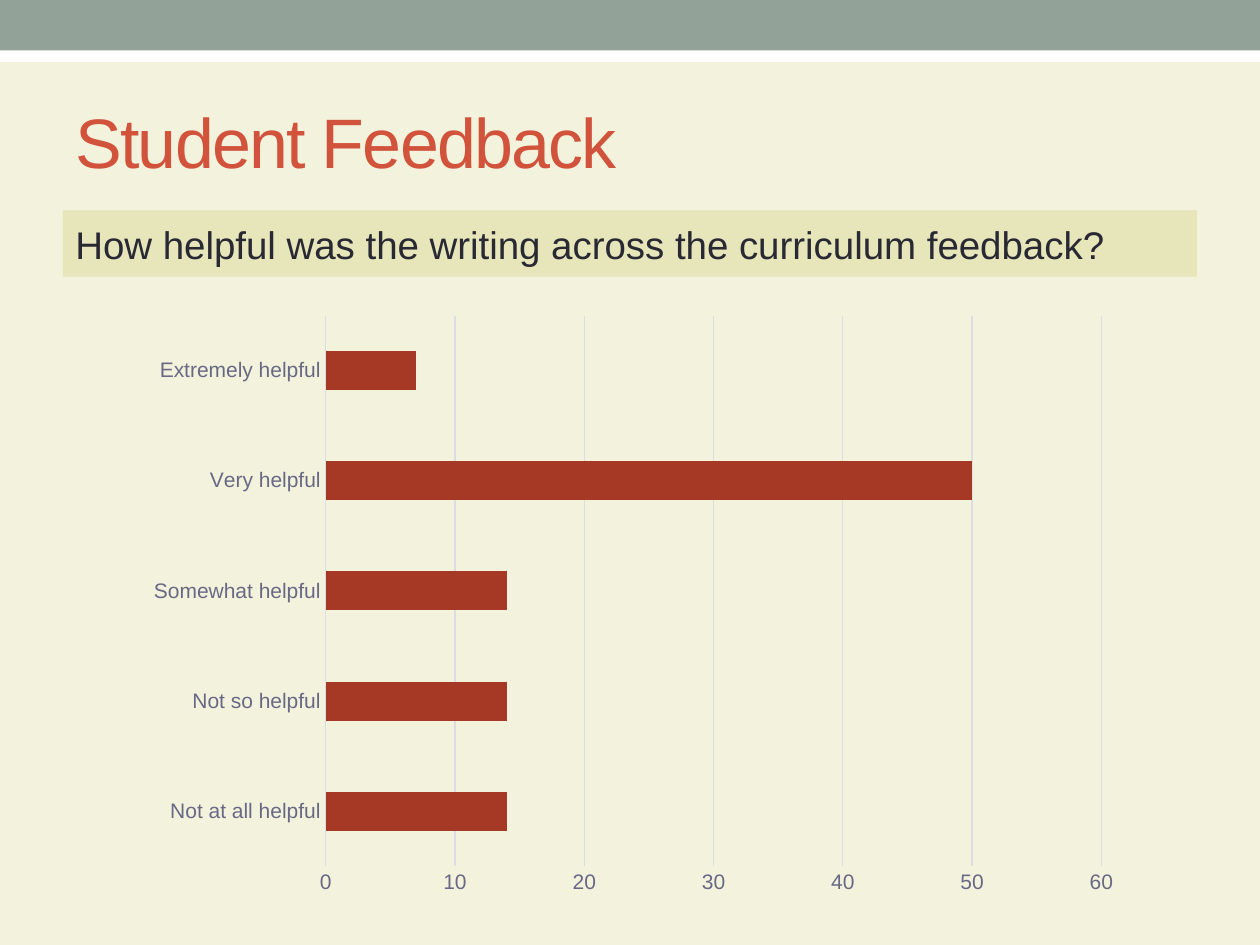
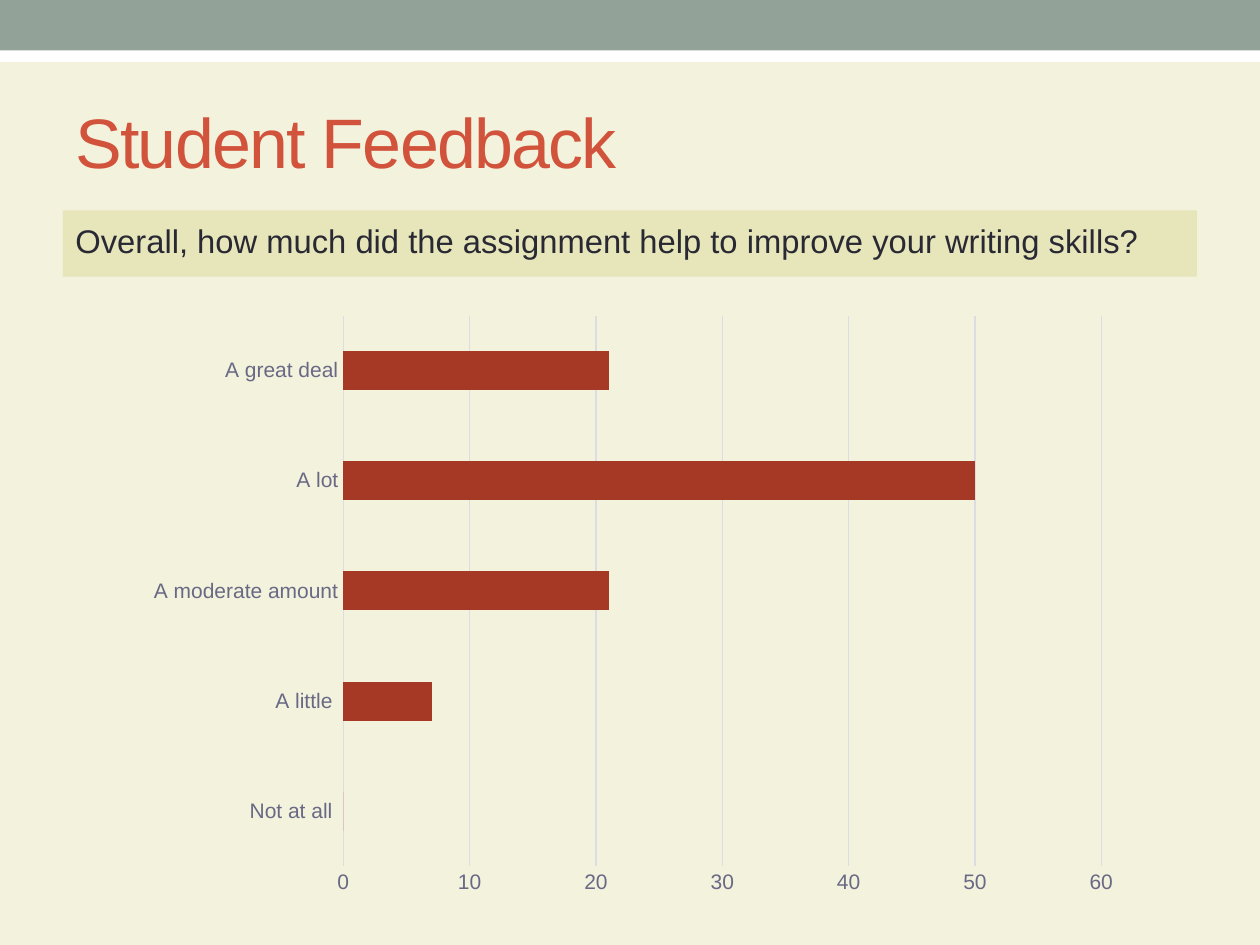
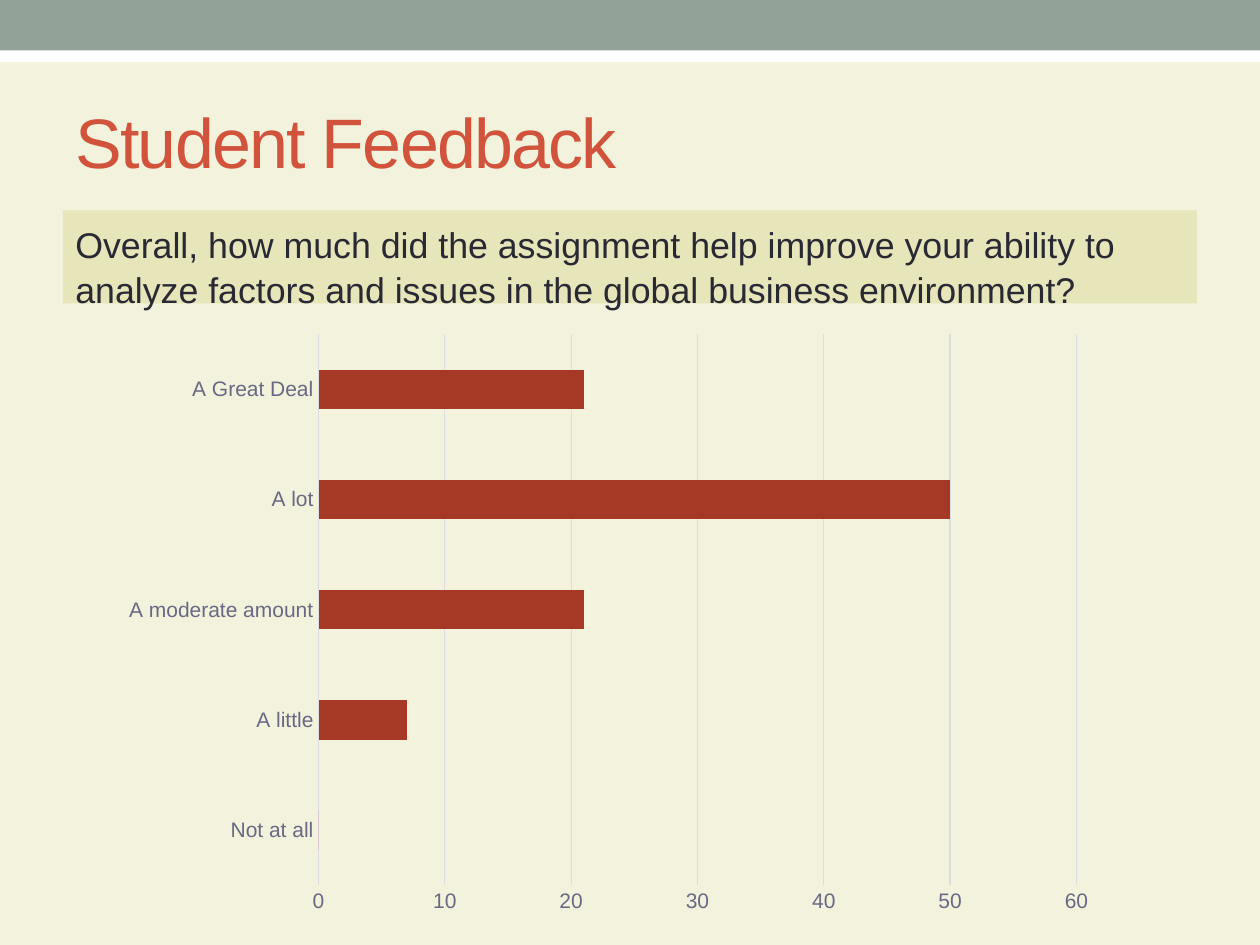
from dataclasses import dataclass

from pptx import Presentation
from pptx import util as u
from pptx.chart.data import CategoryChartData
from pptx.dml.color import RGBColor
from pptx.enum import chart as charts, shapes, text


@dataclass(frozen=True)
class Theme:
    font: str = "Arial"
    page: str = "F3F2DC"
    band: str = "93A299"
    strip: str = "FFFFFF"
    title: str = "D2533C"
    panel: str = "E7E5BA"
    ink: str = "292934"
    label: str = "696986"
    grid: str = "DCDCE3"
    bar: str = "A53926"
    head_size: float = 40
    label_size: float = 12


THEME = Theme()
LEFT, WIDE = 1.27, 22.86

SLIDES = [
    dict(ask="How helpful was the writing across the curriculum feedback?",
         size=22, high=1.34, spot=(2.7, 6.12),
         cats=["Not at all helpful", "Not so helpful", "Somewhat helpful",
               "Very helpful", "Extremely helpful"],
         vals=[14, 14, 14, 50, 7]),
    dict(ask="Overall, how much did the assignment help to improve your "
             "writing skills?",
         size=18.7, high=1.34, spot=(2.7, 6.12),
         cats=["Not at all ", "A little ", "A moderate amount", "A lot",
               "A great deal"],
         vals=[0, 7, 21, 50, 21]),
    dict(ask="Overall, how much did the assignment help improve your ability "
             "to analyze factors and issues in the global business environment?",
         size=20.4, high=1.88, spot=(2.2, 6.5), lead=1.05,
         cats=["Not at all", "A little", "A moderate amount", "A lot",
               "A Great Deal"],
         vals=[0, 7, 21, 50, 21]),
]


def rgb(code):
    return RGBColor.from_string(code)


def style(item, **props):
    for name, value in props.items():
        setattr(item, name, value)


def ink(font, size, color):
    style(font, name=THEME.font, size=u.Pt(size))
    font.color.rgb = rgb(color)


def block(slide, x, y, w, h, color):
    """Add a plain filled rectangle without outline or shadow."""
    box = slide.shapes.add_shape(shapes.MSO_SHAPE.RECTANGLE,
                                 *map(u.Cm, (x, y, w, h)))
    box.shadow.inherit = False
    box.fill.solid()
    box.fill.fore_color.rgb = rgb(color)
    box.line.fill.background()
    return box


def write(box, words, size, color, lead=None, **frame):
    """Fill a box with one left-aligned paragraph and return its run."""
    style(box.text_frame, word_wrap=True, **frame)
    para = box.text_frame.paragraphs[0]
    style(para, alignment=text.PP_ALIGN.LEFT, line_spacing=lead)
    run = para.add_run()
    run.text = words
    ink(run.font, size, color)
    return run


def bands(slide):
    block(slide, 0, 0.61, 25.4, 0.64, THEME.strip)
    block(slide, 0, 0, 25.4, 1.02, THEME.band)


def head(slide, words):
    box = slide.shapes.add_textbox(*map(u.Cm, (LEFT, 1.47, WIDE, 2.74)))
    run = write(box, words, THEME.head_size, THEME.title,
                vertical_anchor=text.MSO_ANCHOR.MIDDLE)
    run.font._element.set("spc", "-100")


def panel(slide, ask, size, high, lead):
    box = block(slide, LEFT, 4.24, WIDE, high, THEME.panel)
    write(box, ask, size, THEME.ink, lead,
          vertical_anchor=text.MSO_ANCHOR.TOP, margin_top=u.Cm(0.21))


def rule(line):
    line.color.rgb = rgb(THEME.grid)
    line.width = u.Pt(0.75)


def bars(slide, spot, cats, vals):
    data = CategoryChartData()
    data.categories = cats
    data.add_series("Series 1", vals)
    chart = slide.shapes.add_chart(
        charts.XL_CHART_TYPE.BAR_CLUSTERED,
        *map(u.Cm, (*spot, 20.14, 12.14)), data).chart
    style(chart, has_legend=False, has_title=False)
    ink(chart.font, THEME.label_size, THEME.label)

    plot = chart.plots[0]
    style(plot, gap_width=182, vary_by_categories=False)
    fill = plot.series[0].format.fill
    fill.solid()
    fill.fore_color.rgb = rgb(THEME.bar)

    cat, val = chart.category_axis, chart.value_axis
    for axis in (cat, val):
        style(axis, major_tick_mark=charts.XL_TICK_MARK.NONE,
              minor_tick_mark=charts.XL_TICK_MARK.NONE)
        ink(axis.tick_labels.font, THEME.label_size, THEME.label)
    style(val, minimum_scale=0, maximum_scale=60, major_unit=10,
          has_major_gridlines=True)
    val.format.line.fill.background()
    rule(cat.format.line)
    rule(val.major_gridlines.format.line)


def main():
    deck = Presentation()
    style(deck, slide_width=u.Cm(25.4), slide_height=u.Cm(19.05))
    back = deck.slide_master.background.fill
    back.solid()
    back.fore_color.rgb = rgb(THEME.page)
    for item in SLIDES:
        slide = deck.slides.add_slide(deck.slide_layouts[6])
        bands(slide)
        head(slide, "Student Feedback")
        panel(slide, item["ask"], item["size"], item["high"], item.get("lead"))
        bars(slide, item["spot"], item["cats"], item["vals"])
    deck.save("out.pptx")


if __name__ == "__main__":
    main()
